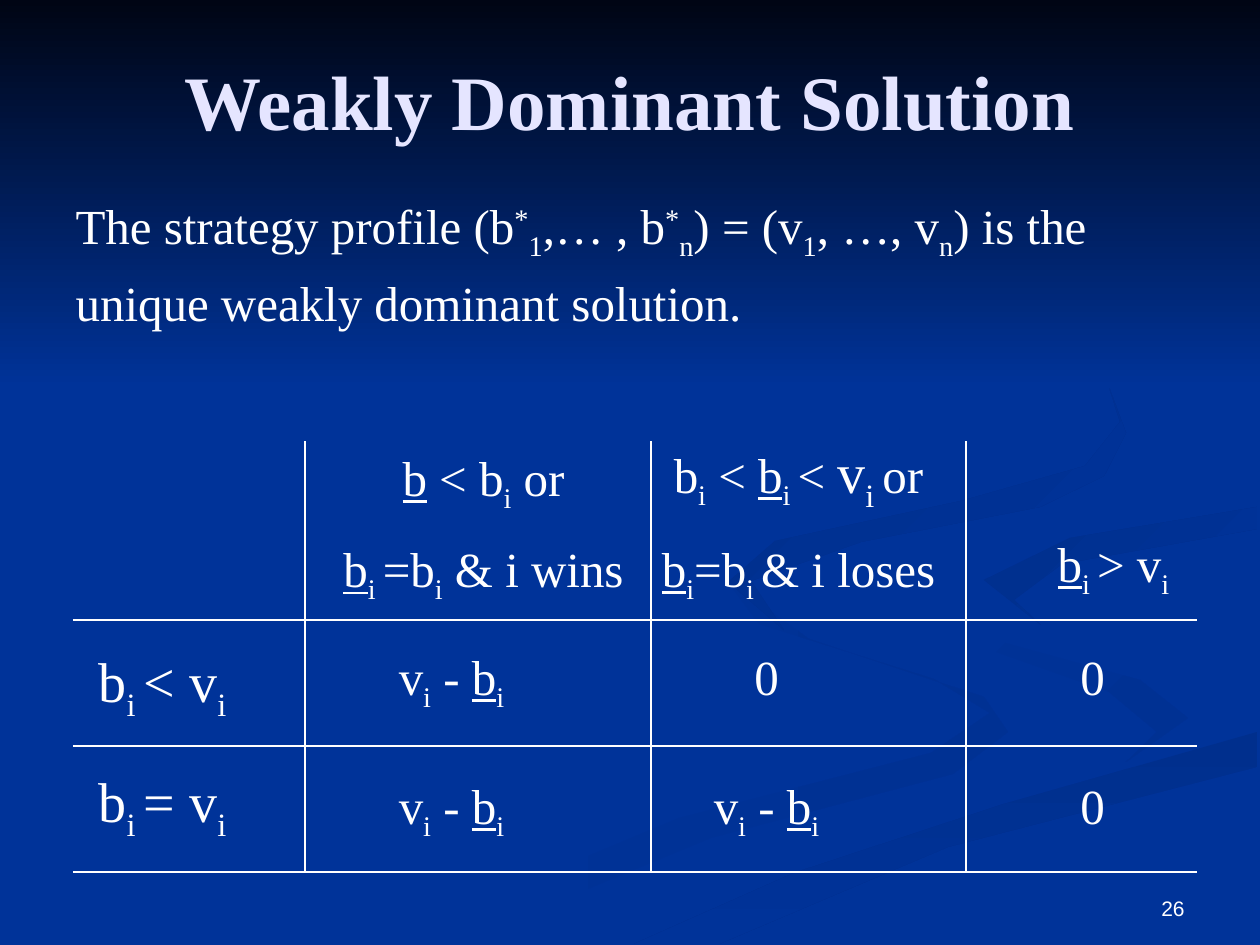
import itertools

import pptx
import pptx.dml.color
import pptx.enum.shapes
import pptx.enum.text
import pptx.oxml.ns
import pptx.util
from lxml import etree

EMU_PER_PX = 914400 / 126
NAVY = pptx.dml.color.RGBColor(0x00, 0x33, 0x99)
NIGHT = pptx.dml.color.RGBColor(0x00, 0x05, 0x14)
SHADE = pptx.dml.color.RGBColor(0x00, 0x2F, 0x8D)
FAINT = pptx.dml.color.RGBColor(0x00, 0x31, 0x93)
LAVENDER = pptx.dml.color.RGBColor(0xE5, 0xE5, 0xFF)
WHITE = pptx.dml.color.RGBColor(0xFF, 0xFF, 0xFF)
SERIF = "Times New Roman"
CENTER = pptx.enum.text.PP_ALIGN.CENTER
RIGHT = pptx.enum.text.PP_ALIGN.RIGHT
MARKS = "_^~`"

RIBBONS = [
    (NAVY, FAINT, 0, [
        (984, 697), (809, 639), (725, 578), (759, 624), (934, 679), (990, 713), (931, 753),
        (679, 818), (378, 944), (455, 944), (711, 838), (953, 774), (1008, 732)]),
    (NAVY, FAINT, 315, [
        (1188, 718), (1140, 680), (998, 641), (912, 585), (951, 636), (1109, 692),
        (1157, 732), (1126, 762)]),
    (SHADE, NAVY, 270, [
        (634, 944), (719, 944), (948, 847), (1257, 767), (1257, 732), (1004, 804), (794, 873)]),
    (SHADE, NAVY, 315, [
        (984, 580), (1041, 625), (1014, 600), (1062, 564), (1257, 529), (1257, 507),
        (1070, 538)]),
    (SHADE, NAVY, 315, [
        (861, 542), (1040, 507), (1104, 476), (1126, 433), (1109, 387), (1120, 422),
        (1085, 466), (961, 501), (775, 541), (728, 582), (784, 630), (751, 581)]),
]


def px(length):
    """Turn px into EMU."""
    return pptx.util.Emu(round(length * EMU_PER_PX))


def place(shape, left, top, width, height):
    """Move a shape to a box in px and bring it to the front."""
    shape.left, shape.top, shape.width, shape.height = map(px, (left, top, width, height))
    shape.element.getparent().append(shape.element)


def add_runs(paragraph, formula):
    """Add runs; _ ^ ~ ` make the next character sub, super, underlined or large."""
    styled, marks = [], ""
    for char in formula:
        if char in MARKS:
            marks += char
        else:
            styled.append((marks, char))
            marks = ""
    for marks, group in itertools.groupby(styled, key=lambda pair: pair[0]):
        run = paragraph.add_run()
        run.text = "".join(char for _, char in group)
        if "~" in marks:
            run.font.underline = True
        if "`" in marks:
            run.font.size = pptx.util.Pt(32)
        if "_" in marks or "^" in marks:
            run._r.get_or_add_rPr().set("baseline", "-25000" if "_" in marks else "30000")


def write(frame, formulas, size, align=None, gap=0, font=SERIF, color=WHITE):
    """Fill a text frame with one paragraph per formula."""
    for index, formula in enumerate(formulas):
        paragraph = frame.add_paragraph() if index else frame.paragraphs[0]
        paragraph.alignment = align
        paragraph.space_before = pptx.util.Pt(gap)
        paragraph.font.name = font
        paragraph.font.size = pptx.util.Pt(size)
        paragraph.font.color.rgb = color
        add_runs(paragraph, formula)


def add_label(slide, box, formulas, size=28, wrap=True, **style):
    """Add a text box holding formulas."""
    frame = slide.shapes.add_textbox(*map(px, box)).text_frame
    frame.word_wrap = wrap
    write(frame, formulas, size, **style)
    return frame


def add_rule(slide, x1, y1, x2, y2):
    """Draw one thin white rule of the payoff grid."""
    rule = slide.shapes.add_connector(
        pptx.enum.shapes.MSO_CONNECTOR.STRAIGHT, px(x1), px(y1), px(x2), px(y2))
    rule.line.color.rgb = WHITE
    rule.line.width = pptx.util.Pt(0.75)
    etree.SubElement(rule.element.spPr, pptx.oxml.ns.qn("a:effectLst"))


def shade(shape, first, last, angle):
    """Give a shape a two-colour gradient without line or shadow."""
    shape.shadow.inherit = False
    shape.line.fill.background()
    shape.fill.gradient()
    shape.fill.gradient_angle = angle
    for stop, color in zip(shape.fill.gradient_stops, (first, last)):
        stop.color.rgb = color


def draw_backdrop(slide, left, top, width, sky_height):
    """Draw the ribbons and the darkening sky over a navy background."""
    slide.background.fill.solid()
    slide.background.fill.fore_color.rgb = NAVY
    for first, last, angle, points in RIBBONS:
        outline = slide.shapes.build_freeform(*points[0], scale=EMU_PER_PX)
        outline.add_line_segments(points[1:], close=True)
        shade(outline.convert_to_shape(px(left), px(top)), first, last, angle)
    sky = slide.shapes.add_shape(
        pptx.enum.shapes.MSO_SHAPE.RECTANGLE, *map(px, (left, top, width, sky_height)))
    shade(sky, NIGHT, NAVY, 270)


def fill_heading(slide, left, top, width, height):
    """Set the slide title."""
    heading = slide.shapes.title
    place(heading, left, top, width, height)
    heading.text_frame.vertical_anchor = pptx.enum.text.MSO_ANCHOR.MIDDLE
    write(heading.text_frame, ["Weakly Dominant Solution"], 44, CENTER, color=LAVENDER)
    heading.text_frame.paragraphs[0].font.bold = True


def fill_claim(slide, left, top, width, height):
    """Set the statement in the body placeholder, with hanging indents and no bullets."""
    claim = slide.placeholders[1]
    place(claim, left, top, width, height)
    claim.text_frame.auto_size = pptx.enum.text.MSO_AUTO_SIZE.NONE
    write(claim.text_frame, ["The strategy profile (b^*_1,… , b^*_n) = (v_1, …, v_n) is the",
                             "unique weakly dominant solution."], 28, gap=6)
    for paragraph in claim.text_frame.paragraphs:
        properties = paragraph._p.get_or_add_pPr()
        properties.set("marL", str(px(48)))
        properties.set("indent", str(-px(48)))
        bullet = etree.Element(pptx.oxml.ns.qn("a:buNone"))
        properties.find(pptx.oxml.ns.qn("a:defRPr")).addprevious(bullet)


def draw_payoffs(slide, left, top, width, height):
    """Draw the payoff grid with its headings, row labels and cells."""
    for y in (179, 305, height):
        add_rule(slide, left, top + y, left + width, top + y)
    for x in (232, 578, 893):
        add_rule(slide, left + x, top, left + x, top + height)
    headings = [(232, 0, 160, ["~b < b_i or", "~b_i_ =b_i & i wins"]),
                (547, -10, 169, ["b_i < ~b_i_ < `v`_i`_ or", "~b_i=b_i_ & i loses"]),
                (862, 86, 72, ["~b_i_ > v_i"])]
    for x, y, tall, formulas in headings:
        add_label(slide, (left + x, top + y, 357, tall), formulas, align=CENTER, gap=14)
    rows = [(199, 199, "b_i_ < v_i", ["v_i - ~b_i", "0", "0"]),
            (319, 328, "b_i_ = v_i", ["v_i - ~b_i", "v_i - ~b_i", "0"])]
    for label_y, cell_y, condition, payoffs in rows:
        add_label(slide, (left + 11, top + label_y, 157, 79), [condition], 32, False, align=CENTER)
        for x, payoff in zip((200, 515, 841), payoffs):
            add_label(slide, (left + x, top + cell_y, 357, 72), [payoff], align=CENTER, gap=14)


def main():
    """Build and save the slide."""
    deck = pptx.Presentation()
    deck.slide_width, deck.slide_height = px(1260), px(945)
    slide = deck.slides.add_slide(deck.slide_layouts[1])
    draw_backdrop(slide, 0, 0, 1260, 388)
    fill_heading(slide, 63, 21, 1134, 158)
    fill_claim(slide, 63, 189, 1134, 624)
    draw_payoffs(slide, 73, 441, 1124, 431)
    number = add_label(slide, (903, 861, 294, 66), ["26"], 12, align=RIGHT, font="Arial")
    number.vertical_anchor = pptx.enum.text.MSO_ANCHOR.BOTTOM
    deck.save("out.pptx")


if __name__ == "__main__":
    main()
